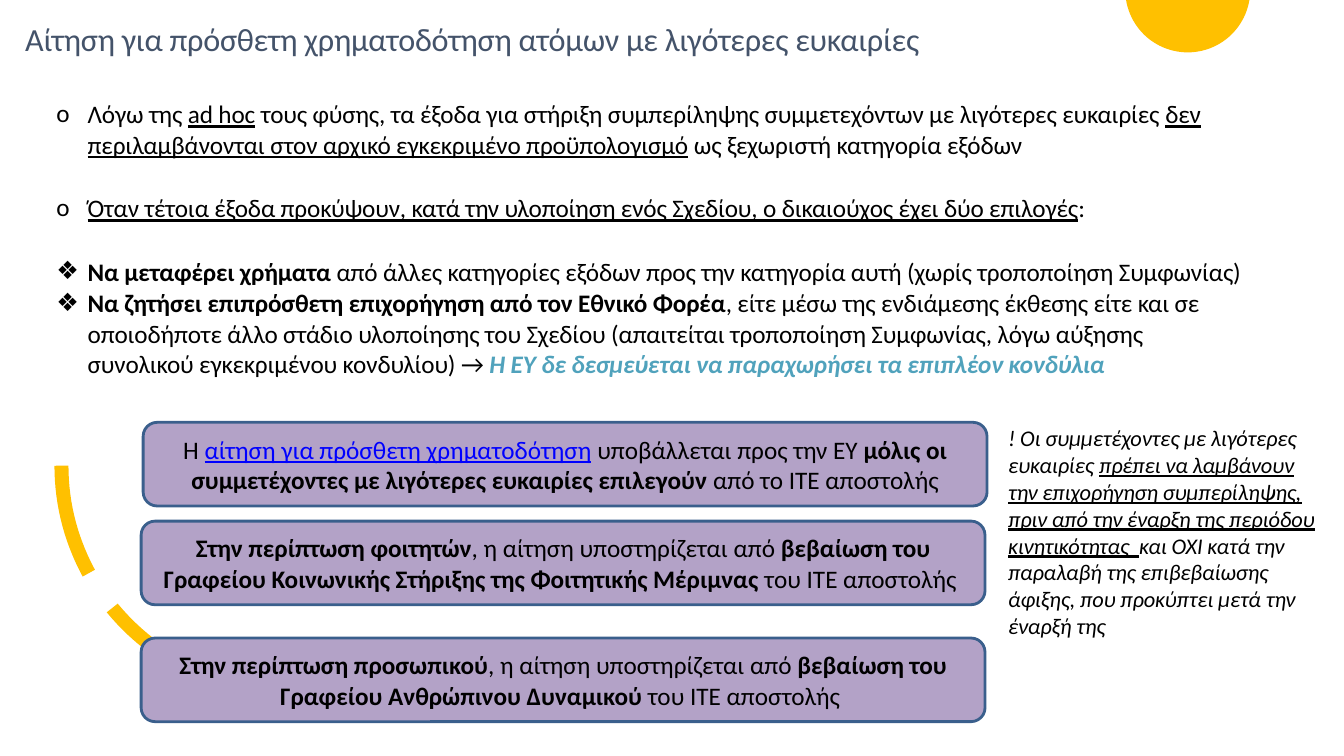
from math import cos, pi, sin

from lxml import etree
from pptx import Presentation
from pptx.dml.color import RGBColor
from pptx.enum import dml, shapes, text
from pptx.oxml.ns import qn
from pptx.util import Inches, Pt

BLACK = RGBColor(0x00, 0x00, 0x00)
SLATE = RGBColor(0x44, 0x53, 0x6A)
GOLD = RGBColor(0xFF, 0xC0, 0x00)
TEAL = RGBColor(0x50, 0xA2, 0xBC)
LINK_BLUE = RGBColor(0x00, 0x00, 0xFF)
LILAC = RGBColor(0xB3, 0xA2, 0xC7)
NAVY = RGBColor(0x3A, 0x5F, 0x8C)


def write_runs(paragraph, pieces, size, color=BLACK, tracking=0):
    """Add (wording, styles[, colour]) pieces; styles holds any of b, i, u."""
    for wording, styles, *own_color in pieces:
        run = paragraph.add_run()
        run.text = wording
        run.font.name = "Calibri"
        run.font.size = Pt(size)
        run.font.bold = "b" in styles
        run.font.italic = "i" in styles
        run.font.underline = "u" in styles
        run.font.color.rgb = own_color[0] if own_color else color
        if tracking:
            run._r.get_or_add_rPr().set("spc", str(tracking))


def add_arc(center_x, center_y, radius, start, end, close):
    """Draw a circular outline between two angles, clockwise from the right."""
    steps = 48
    points = [(Inches(center_x + radius * cos(start + (end - start) * n / steps)),
               Inches(center_y + radius * sin(start + (end - start) * n / steps)))
              for n in range(steps + 1)]
    builder = slide.shapes.build_freeform(*points[0])
    builder.add_line_segments(points[1:], close=close)
    arc = builder.convert_to_shape()
    arc.shadow.inherit = False
    return arc


presentation = Presentation()
presentation.slide_width = Inches(13.33)
presentation.slide_height = Inches(7.5)
slide = presentation.slides.add_slide(presentation.slide_layouts[1])

# Title and main points
title, points = slide.placeholders
for placeholder, box in ((title, (0.25, 0.2, 9.3, 0.38)),
                         (points, (0.54, 0.97, 11.83, 4.39))):
    placeholder.left, placeholder.top, placeholder.width, placeholder.height = map(Inches, box)
    frame = placeholder.text_frame
    frame.margin_left = frame.margin_right = frame.margin_bottom = 0
    frame.margin_top = Inches(0.01)
    frame.vertical_anchor = text.MSO_ANCHOR.TOP
    frame.word_wrap = True
    frame.auto_size = text.MSO_AUTO_SIZE.NONE

heading = title.text_frame.paragraphs[0]
heading.alignment = text.PP_ALIGN.LEFT
heading.line_spacing = Pt(26.4)
heading.space_before = Pt(1)
write_runs(heading, [("Αίτηση για πρόσθετη χρηματοδότηση ατόμων με λιγότερες ευκαιρίες", "")],
           23, SLATE, -20)

main_points = [
    ("o", 0.9, [
        ("Λόγω της ", ""), ("ad hoc", "u"),
        (" τους φύσης, τα έξοδα για στήριξη συμπερίληψης συμμετεχόντων με λιγότερες ευκαιρίες ", ""),
        ("δεν περιλαμβάνονται στον αρχικό εγκεκριμένο προϋπολογισμό", "u"),
        (" ως ξεχωριστή κατηγορία εξόδων", "")]),
    ("o", 23.8, [
        ("Όταν τέτοια έξοδα προκύψουν, κατά την υλοποίηση ενός Σχεδίου, "
         "ο δικαιούχος έχει δύο επιλογές", "u"), (":", "")]),
    ("❖", 23.8, [
        ("Να μεταφέρει χρήματα", "b"),
        (" από άλλες κατηγορίες εξόδων προς την κατηγορία αυτή (χωρίς τροποποίηση Συμφωνίας)", "")]),
    ("❖", 0.9, [
        ("Να ζητήσει επιπρόσθετη επιχορήγηση από τον Εθνικό Φορέα", "b"),
        (", είτε μέσω της ενδιάμεσης έκθεσης είτε και σε οποιοδήποτε άλλο στάδιο υλοποίησης "
         "του Σχεδίου (απαιτείται τροποποίηση Συμφωνίας, λόγω αύξησης συνολικού εγκεκριμένου "
         "κονδυλίου) → ", ""),
        ("Η ΕΥ δε δεσμεύεται να παραχωρήσει τα επιπλέον κονδύλια", "bi", TEAL)]),
]
for index, (bullet, gap, pieces) in enumerate(main_points):
    frame = points.text_frame
    point = frame.add_paragraph() if index else frame.paragraphs[0]
    point.space_before = Pt(gap)
    properties = point._p.get_or_add_pPr()
    properties.set("marL", str(Inches(0.33)))
    properties.set("indent", str(Inches(-0.31)))
    etree.SubElement(properties, qn("a:buFont")).set("typeface", "Calibri")
    etree.SubElement(properties, qn("a:buChar")).set("char", bullet)
    write_runs(point, pieces, 18, tracking=-10)

# Gold disc cut by the top edge, and dashed quarter circle
edge = math_edge = 0.16
disc = add_arc(11.78, -0.1, 0.62, edge, pi - edge, close=True)
disc.fill.solid()
disc.fill.fore_color.rgb = GOLD
disc.line.fill.background()

quarter = add_arc(2.84, 4.62, 2.23, pi, pi / 2, close=False)
quarter.fill.background()
quarter.line.color.rgb = GOLD
quarter.line.width = Pt(10)
quarter.line.dash_style = dml.MSO_LINE.LONG_DASH

# Application steps
steps = [
    (1.42, 4.19, [
        ("Η ", ""), ("αίτηση για πρόσθετη χρηματοδότηση", "u", LINK_BLUE),
        (" υποβάλλεται προς την ΕΥ ", ""),
        ("μόλις οι συμμετέχοντες με λιγότερες ευκαιρίες επιλεγούν ", "b"),
        ("από το ΙΤΕ αποστολής", "")]),
    (1.4, 5.17, [
        ("Στην περίπτωση φοιτητών", "b"), (", η αίτηση υποστηρίζεται από ", ""),
        ("βεβαίωση του Γραφείου Κοινωνικής Στήριξης της Φοιτητικής Μέριμνας", "b"),
        (" του ΙΤΕ αποστολής ", "")]),
    (1.4, 6.33, [
        ("Στην περίπτωση προσωπικού", "b"), (", η αίτηση υποστηρίζεται από ", ""),
        ("βεβαίωση του Γραφείου Ανθρώπινου Δυναμικού ", "b"),
        ("του ΙΤΕ αποστολής ", "")]),
]
for left, top, pieces in steps:
    step = slide.shapes.add_shape(shapes.MSO_SHAPE.ROUNDED_RECTANGLE, Inches(left), Inches(top),
                                  Inches(8.37), Inches(0.83))
    step.shadow.inherit = False
    step.fill.solid()
    step.fill.fore_color.rgb = LILAC
    step.line.color.rgb = NAVY
    step.line.width = Pt(2)
    step.text_frame.word_wrap = True
    step.text_frame.vertical_anchor = text.MSO_ANCHOR.MIDDLE
    step.text_frame.paragraphs[0].alignment = text.PP_ALIGN.CENTER
    write_runs(step.text_frame.paragraphs[0], pieces, 18)

# Side warning
warning = slide.shapes.add_textbox(Inches(9.9), Inches(4.16), Inches(3.25), Inches(2.26))
warning.text_frame.word_wrap = True
warning.text_frame.paragraphs[0].space_before = Pt(0.9)
write_runs(warning.text_frame.paragraphs[0], [
    ("! Οι συμμετέχοντες με λιγότερες ευκαιρίες ", "i"),
    ("πρέπει να λαμβάνουν την επιχορήγηση συμπερίληψης, πριν από την έναρξη της "
     "περιόδου κινητικότητας  ", "iu"),
    ("και ΌΧΙ κατά την παραλαβή της επιβεβαίωσης άφιξης, που προκύπτει μετά την έναρξή της", "i"),
], 16, tracking=-10)

presentation.save("out.pptx")
